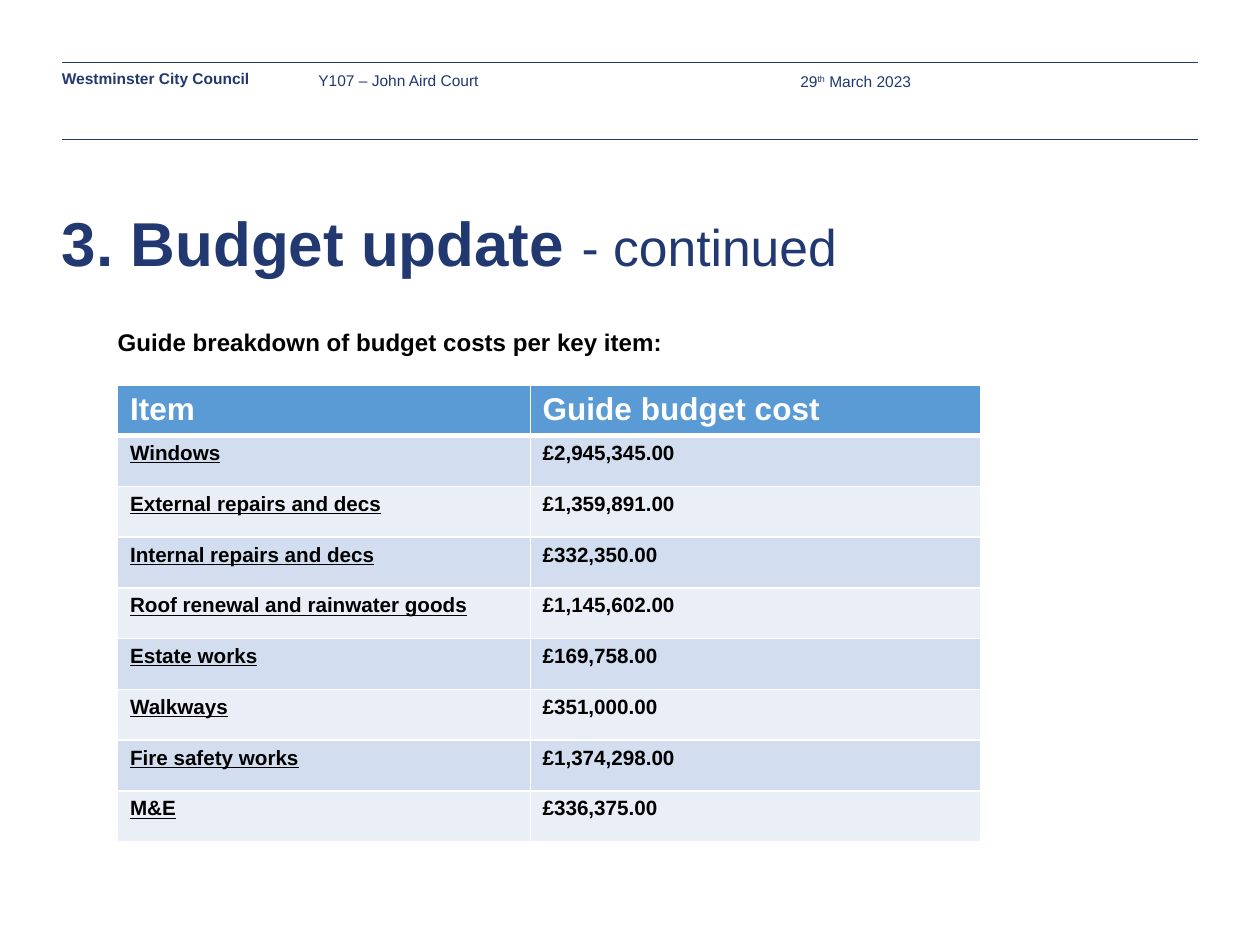
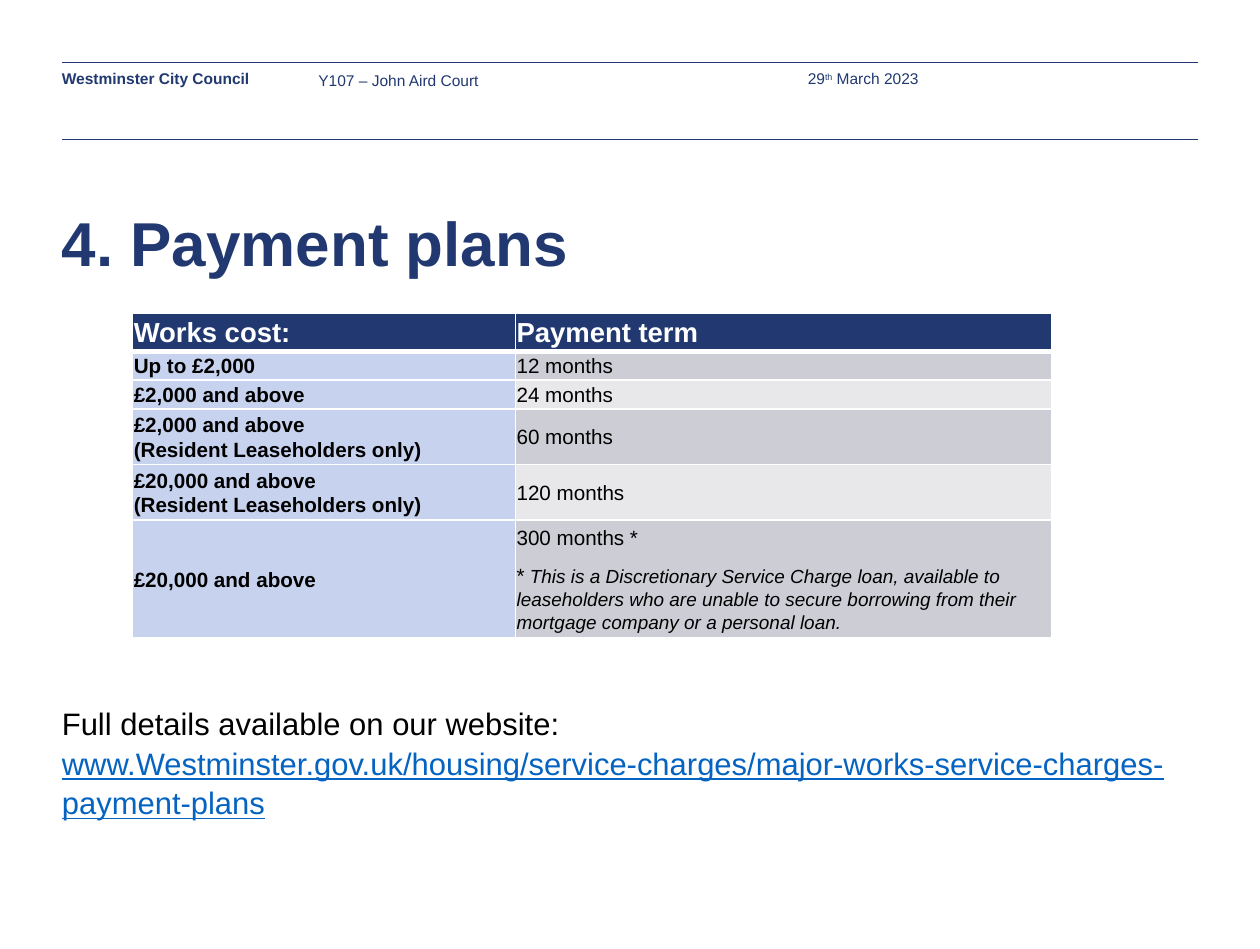
from pptx import Presentation
from pptx.dml.color import RGBColor
from pptx.enum.shapes import MSO_CONNECTOR
from pptx.enum.text import MSO_ANCHOR, PP_ALIGN
from pptx.oxml import parse_xml
from pptx.oxml.ns import nsdecls
from pptx.util import Inches, Pt

NAVY, BLACK, WHITE, LINK = "213970", "000000", "FFFFFF", "0563C1"
SMALL = dict(size=Pt(9), color=NAVY)


def rgb(code):
    return RGBColor.from_string(code)


def style(target, values):
    for name, value in values.items():
        if name == "color":
            target.color.rgb = rgb(value)
        else:
            setattr(target, name, value)


class Deck:
    font = "Arial"
    zero = dict.fromkeys(
        ("margin_left", "margin_top", "margin_right", "margin_bottom"), 0)

    def __init__(self):
        self.prs = Presentation()
        self.prs.slide_width = Inches(10.17)
        self.prs.slide_height = Inches(7.66)

    def start(self, title, left, top):
        self.slide = self.prs.slides.add_slide(self.prs.slide_layouts[5])
        self.title(title)
        for y in (0.5, 1.12):
            self.rule(y)
        self.text((0.5, 0.56, 1.8, 0.15),
                  [[("Westminster City Council", dict(bold=True))]], SMALL)
        self.text((2.57, 0.56, 3.38, 0.41), [[("Y107 – John Aird Court", {})]],
                  SMALL, dict(line_spacing=Pt(12)))
        self.text((left, top, 2.29, 0.15),
                  [[("29", {}), ("th", dict(raised=True)), (" March 2023", {})]],
                  SMALL, anchor=MSO_ANCHOR.MIDDLE)

    def title(self, runs):
        shape = self.slide.shapes.title
        names = ("left", "top", "width", "height")
        style(shape, dict(zip(names, map(Inches, (0.5, 1.65, 9.17, 0.82)))))
        self.fill(shape.text_frame, [runs],
                  dict(size=Pt(36), bold=True, color=NAVY))

    def rule(self, y):
        line = self.slide.shapes.add_connector(
            MSO_CONNECTOR.STRAIGHT, *map(Inches, (0.5, y, 9.67, y)))
        style(line.line, dict(color=NAVY, width=Pt(0.25)))
        line._element.spPr.append(
            parse_xml(f"<a:effectLst {nsdecls('a')}/>"))

    def text(self, box, paras, look, para=None, anchor=MSO_ANCHOR.TOP):
        shape = self.slide.shapes.add_textbox(*map(Inches, box))
        self.fill(shape.text_frame, paras, look, para, anchor)

    def fill(self, frame, paras, look, para=None, anchor=MSO_ANCHOR.TOP):
        style(frame, dict(self.zero, word_wrap=True, vertical_anchor=anchor))
        self.put(frame, paras, look, para)

    def put(self, frame, paras, look, para=None):
        for index, runs in enumerate(paras):
            item = frame.add_paragraph() if index else frame.paragraphs[0]
            style(item, dict(alignment=PP_ALIGN.LEFT, **(para or {})))
            for words, extra in runs:
                self.span(item, words, {**look, **extra})

    def span(self, item, words, look):
        values = dict(look, name=self.font)
        raised = values.pop("raised", False)
        for index, part in enumerate(words.split("\n")):
            if index:
                item.add_line_break()
            run = item.add_run()
            run.text = part
            style(run.font, values)
            if raised:
                run.font._element.set("baseline", "30000")

    def edge(self, cell, row):
        props = cell._tc.get_or_add_tcPr()
        wide = {"T": row == 1, "B": row == 0}
        for side in "LRTB":
            width = Pt(3 if wide.get(side) else 1)
            props.append(parse_xml(
                f'<a:ln{side} {nsdecls("a")} w="{width}"><a:solidFill>'
                f'<a:srgbClr val="{WHITE}"/></a:solidFill></a:ln{side}>'))

    def table(self, left, top, cols, rows, data, fills, looks, frame, para=None):
        box = (left, top, sum(cols), sum(rows))
        grid = self.slide.shapes.add_table(
            len(rows), len(cols), *map(Inches, box)).table
        for col, width in zip(grid.columns, cols):
            col.width = Inches(width)
        for row, height in zip(grid.rows, rows):
            row.height = Inches(height)
        for y, line in enumerate(data):
            for x, value in enumerate(line):
                cell = grid.cell(y, x)
                self.edge(cell, y)
                cell.fill.solid()
                cell.fill.fore_color.rgb = rgb(
                    fills[1][x][(y - 1) % 2] if y else fills[0])
                style(cell, frame)
                paras = [[(value, {})]] if isinstance(value, str) else value
                self.put(cell.text_frame, paras,
                         looks[1][x] if y else looks[0], para)


def budget(deck):
    deck.start([("3. Budget update ", {}),
                ("- continued", dict(size=Pt(30), bold=False))], 6.46, 0.58)
    deck.text((0.95, 2.64, 8.73, 0.44),
              [[("Guide breakdown of budget costs per key item:", {})]],
              dict(size=Pt(14), bold=True, color=BLACK))
    data = [
        ("Item", "Guide budget cost"),
        ("Windows", "£2,945,345.00"),
        ("External repairs and decs", "£1,359,891.00"),
        ("Internal repairs and decs", "£332,350.00"),
        ("Roof renewal and rainwater goods", "£1,145,602.00"),
        ("Estate works", "£169,758.00"),
        ("Walkways", "£351,000.00"),
        ("Fire safety works", "£1,374,298.00"),
        ("M&E", "£336,375.00"),
    ]
    bands = ("D2DEEF", "EAEFF7")
    head = dict(size=Pt(18.3), bold=True, color=WHITE)
    cost = dict(size=Pt(12), bold=True, color=BLACK)
    deck.table(0.95, 3.11, (3.33, 3.64), [0.37] + [0.41] * 8, data,
               ("5B9BD5", (bands, bands)),
               (head, (dict(cost, underline=True), cost)),
               dict(vertical_anchor=MSO_ANCHOR.TOP))


def plans(deck):
    deck.start([("4. Payment plans", {})], 6.52, 0.56)
    note = (" This is a Discretionary Service Charge loan, available to "
            "leaseholders who are unable to secure borrowing from their "
            "mortgage company or a personal loan.")
    data = [
        ("Works cost:", "Payment term"),
        ("Up to £2,000", "12 months"),
        ("£2,000 and above", "24 months"),
        ("£2,000 and above\n(Resident Leaseholders only)", "60 months"),
        ("£20,000 and above\n(Resident Leaseholders only)", "120 months"),
        ("£20,000 and above",
         [[("300 months *", {})],
          [("*", {}), (note, dict(size=Pt(11), italic=True))]]),
    ]
    head = dict(size=Pt(16), bold=True, color=WHITE)
    cost = dict(size=Pt(12), bold=True, color=BLACK)
    frame = dict.fromkeys(deck.zero, Inches(0.01))
    deck.table(1.07, 2.53, (3.09, 4.33), (0.27, 0.22, 0.22, 0.42, 0.42, 0.89),
               data, (NAVY, (("C7D3EE", "C7D3EE"), ("CDCED5", "E8E8EB"))),
               (head, (cost, dict(cost, bold=False))),
               dict(frame, vertical_anchor=MSO_ANCHOR.MIDDLE),
               dict(line_spacing=1.07, space_after=Pt(8)))
    deck.text((0.5, 5.67, 9.17, 1.28),
              [[("Full details available on our website:", {})],
               [("www.Westminster.gov.uk/housing/service-charges/"
                 "major-works-service-charges-payment-plans",
                 dict(color=LINK, underline=True))]],
              dict(size=Pt(18), color=BLACK), dict(line_spacing=Pt(23)))


def main():
    deck = Deck()
    budget(deck)
    plans(deck)
    deck.prs.save("out.pptx")


if __name__ == "__main__":
    main()
